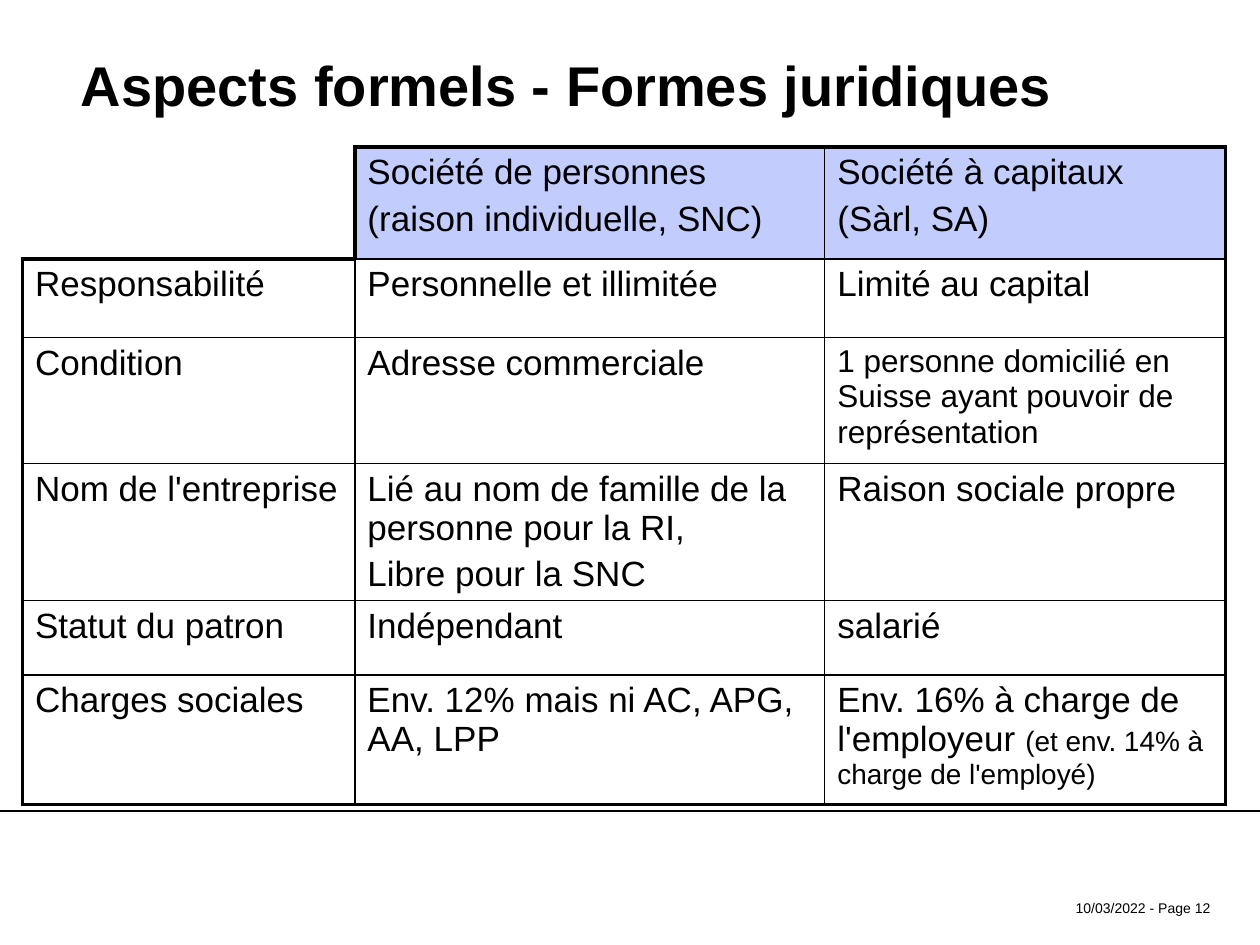
import pptx
import pptx.util
import pptx.dml.color
import pptx.enum.text
import pptx.enum.shapes
import pptx.oxml.ns
from dataclasses import dataclass
from lxml import etree

Pt = pptx.util.Pt
PP_ALIGN = pptx.enum.text.PP_ALIGN
MSO_ANCHOR = pptx.enum.text.MSO_ANCHOR
qn = pptx.oxml.ns.qn


@dataclass(frozen=True)
class Theme:
    font: str = "Arial"
    ink: str = "000000"
    header: str = "C2CDFE"
    title: float = 32
    cell: float = 20
    small: float = 18
    note: float = 16
    footer: float = 8
    thin: float = 1
    thick: float = 2.25
    rule: float = 0.75


T = Theme()
COLUMNS = [190, 268.5, 229]
ROWS = [64, 45, 72, 78, 42.5, 74]
CELLS = [
    ["", "Société de personnes\n(raison individuelle, SNC)", "Société à capitaux\n(Sàrl, SA)"],
    ["Responsabilité", "Personnelle et illimitée", "Limité au capital"],
    ["Condition", "Adresse commerciale",
     [("1 personne domicilié en Suisse ayant pouvoir de représentation", T.small)]],
    ["Nom de l'entreprise",
     "Lié au nom de famille de la personne pour la RI,\nLibre pour la SNC",
     "Raison sociale propre"],
    ["Statut du patron", "Indépendant", "salarié"],
    ["Charges sociales", "Env. 12% mais ni AC, APG, AA, LPP",
     [("Env. 16% à charge de l'employeur ", T.cell),
      ("(et env. 14% à charge de l'employé)", T.note)]],
]


class Builder:
    """Hold the theme and current slide, and add each kind of element."""

    def __init__(self, s, theme):
        self.s, self.t = s, theme

    def rgb(self, value):
        return pptx.dml.color.RGBColor.from_string(value)

    def run(self, p, text, size, bold=False):
        r = p.add_run()
        r.text = text
        for name, value in {"name": self.t.font, "size": Pt(size), "bold": bold}.items():
            setattr(r.font, name, value)
        r.font.color.rgb = self.rgb(self.t.ink)

    def frame(self, tf, anchor):
        formats = {"word_wrap": True, "vertical_anchor": anchor,
                   "auto_size": pptx.enum.text.MSO_AUTO_SIZE.NONE,
                   "margin_left": Pt(7.2), "margin_right": Pt(7.2),
                   "margin_top": Pt(3.6), "margin_bottom": Pt(3.6)}
        for name, value in formats.items():
            setattr(tf, name, value)
        return tf.paragraphs[0]

    def title(self, text, *box):
        sp = self.s.shapes.title
        for name, value in zip(("left", "top", "width", "height"), box):
            setattr(sp, name, Pt(value))
        p = self.frame(sp.text_frame, MSO_ANCHOR.MIDDLE)
        p.alignment = PP_ALIGN.LEFT
        self.run(p, text, self.t.title, True)

    def footer(self, text, *box):
        sp = self.s.shapes.add_textbox(*map(Pt, box))
        p = self.frame(sp.text_frame, MSO_ANCHOR.TOP)
        p.alignment = PP_ALIGN.RIGHT
        self.run(p, text, self.t.footer)

    def rule(self, *ends):
        line = self.s.shapes.add_connector(
            pptx.enum.shapes.MSO_CONNECTOR.STRAIGHT, *map(Pt, ends))
        line.line.color.rgb = self.rgb(self.t.ink)
        line.line.width = Pt(self.t.rule)
        etree.SubElement(line._element.spPr, qn("a:effectLst"))

    def borders(self, cell, widths):
        tcPr = cell._tc.get_or_add_tcPr()
        for side, width in zip("LRTB", widths):
            ln = etree.SubElement(tcPr, qn("a:ln" + side), w=str(Pt(width)))
            if width:
                fill = etree.SubElement(ln, qn("a:solidFill"))
                etree.SubElement(fill, qn("a:srgbClr"), val=self.t.ink)
            else:
                etree.SubElement(ln, qn("a:noFill"))

    def fill_cell(self, cell, content):
        formats = {"margin_left": Pt(7.2), "margin_right": Pt(7.2),
                   "margin_top": Pt(3.6), "margin_bottom": Pt(3.6),
                   "vertical_anchor": MSO_ANCHOR.TOP}
        for name, value in formats.items():
            setattr(cell, name, value)
        tf = cell.text_frame
        if isinstance(content, str):
            lines = [[(text, self.t.cell)] for text in content.split("\n") if text]
        else:
            lines = [content]
        for i, runs in enumerate(lines):
            p = tf.add_paragraph() if i else tf.paragraphs[0]
            if i:
                p.space_before = Pt(self.t.cell * 0.2)
            for text, size in runs:
                self.run(p, text, size)

    def table(self, left, top, columns, rows, cells):
        table = self.s.shapes.add_table(
            len(rows), len(columns), Pt(left), Pt(top), Pt(sum(columns)), Pt(sum(rows))).table
        table.first_row = table.horz_banding = False
        for column, width in zip(table.columns, columns):
            column.width = Pt(width)
        for row, height in zip(table.rows, rows):
            row.height = Pt(height)
        thin, thick = self.t.thin, self.t.thick
        last_r, last_c = len(rows) - 1, len(columns) - 1
        for r, line in enumerate(cells):
            for c, content in enumerate(line):
                cell = table.cell(r, c)
                self.fill_cell(cell, content)
                if r == c == 0:
                    widths = (0, thick, 0, thick)
                else:
                    widths = (thick if c == 0 or (r, c) == (0, 1) else thin,
                              thick if c == last_c else thin,
                              thick if r == 0 or (r, c) == (1, 0) else thin,
                              thick if r == last_r else thin)
                self.borders(cell, widths)
                if r == 0 and c:
                    cell.fill.solid()
                    cell.fill.fore_color.rgb = self.rgb(self.t.header)
                else:
                    cell.fill.background()


def main():
    prs = pptx.Presentation()
    prs.slide_width, prs.slide_height = Pt(720), Pt(540)
    s = prs.slides.add_slide(prs.slide_layouts[5])
    b = Builder(s, T)
    b.title("Aspects formels - Formes juridiques", 39, 3, 648, 90)
    b.footer("10/03/2022 - Page 12", 600.5, 510.5, 98.5, 16.5)
    b.rule(0, 463.5, 720, 463.5)
    b.table(12.8, 84, COLUMNS, ROWS, CELLS)
    prs.save("out.pptx")


if __name__ == "__main__":
    main()
